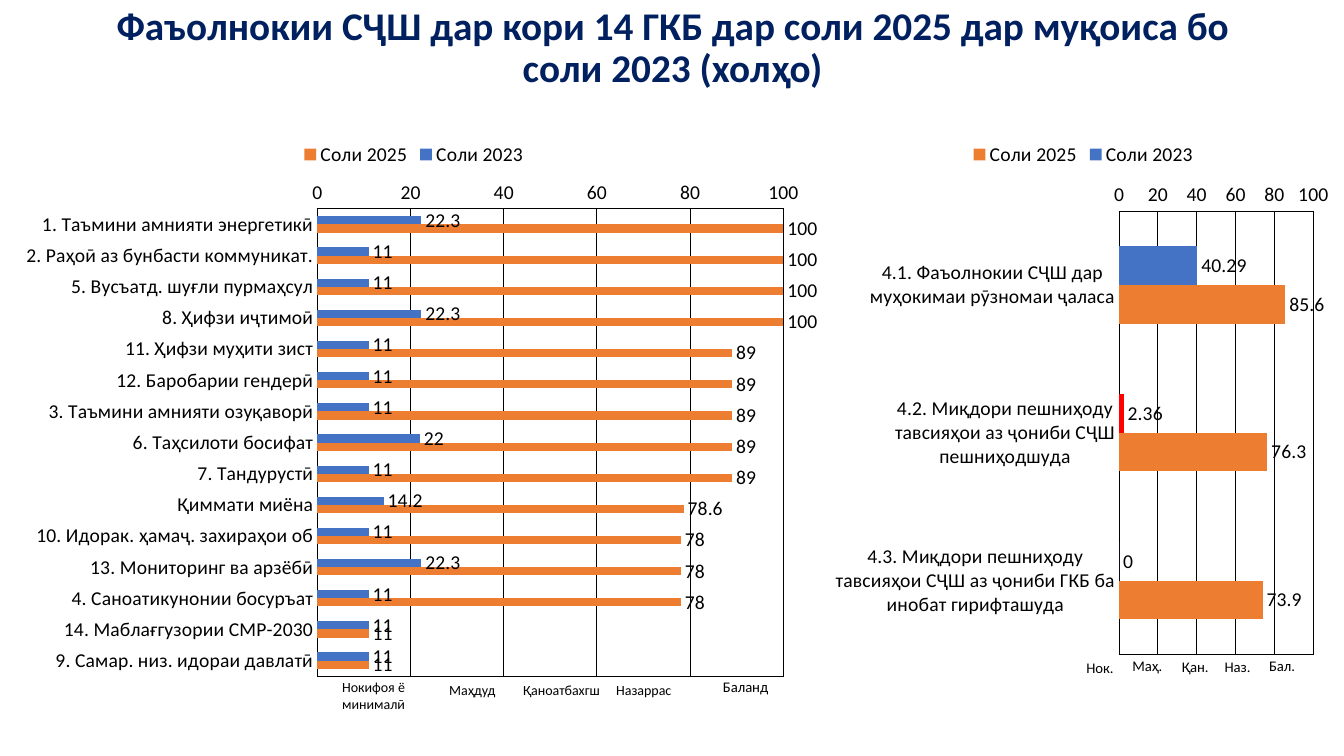
from lxml import etree
from pptx import Presentation
from pptx.chart.data import CategoryChartData
from pptx.dml.color import RGBColor
from pptx.enum.chart import XL_CHART_TYPE, XL_LABEL_POSITION, XL_LEGEND_POSITION, XL_TICK_MARK
from pptx.enum.shapes import MSO_SHAPE
from pptx.enum.text import MSO_ANCHOR, PP_ALIGN
from pptx.oxml import parse_xml
from pptx.util import Inches, Pt

RECT = MSO_SHAPE.RECTANGLE
MIDDLE = MSO_ANCHOR.MIDDLE
CENTER, LEFT = PP_ALIGN.CENTER, PP_ALIGN.LEFT
BAR = XL_CHART_TYPE.BAR_CLUSTERED
OUTSIDE = XL_LABEL_POSITION.OUTSIDE_END
TOP = XL_LEGEND_POSITION.TOP
NO_TICK = XL_TICK_MARK.NONE

COLORS = {
    "title": "002060", "text": "000000", "back": "FFFFFF",
    "2023": "4472C4", "2025": "ED7D31", "low": "FF0000",
}
FONT = "Calibri"
C_NS = "http://schemas.openxmlformats.org/drawingml/2006/chart"
A_NS = "http://schemas.openxmlformats.org/drawingml/2006/main"


def rgb(name):
    return RGBColor.from_string(COLORS[name])


def set_font(font, size, color="text", bold=False):
    font.name = FONT
    font.size = Pt(size)
    font.bold = bold
    font.color.rgb = rgb(color)


prs = Presentation()
prs.slide_width = Inches(13.33)
prs.slide_height = Inches(7.5)
s = prs.slides.add_slide(prs.slide_layouts[5])

title = s.shapes.title
title.left, title.top = Inches(0.92), Inches(0.38)
title.width, title.height = Inches(11.5), Inches(0.67)
tf = title.text_frame
tf.text = "Фаъолнокии СҶШ дар кори 14 ГКБ дар соли 2025 дар муқоиса бо соли 2023 (холҳо)\v"
tf.word_wrap = True
tf.vertical_anchor = MIDDLE
p = tf.paragraphs[0]
p.alignment = CENTER
p.line_spacing = 0.9
set_font(p.font, 28, "title", True)

scale_labels = [
    ("Нокифоя ё минималӣ", 3.12, 6.71, 1.17, 0.38, 10, CENTER, 0.1),
    ("Маҳдуд", 4.26, 6.68, 0.85, 0.32, 10, CENTER, 0.1),
    ("Қаноатбахгш", 5.09, 6.6, 1.17, 0.49, 10, LEFT, 0.1),
    ("Назаррас", 5.98, 6.68, 0.81, 0.32, 10, CENTER, 0.05),
    ("Баланд", 6.99, 6.65, 0.81, 0.32, 10.5, CENTER, 0.1),
    ("Нок.", 10.66, 6.46, 0.5, 0.32, 10.5, CENTER, 0.05),
    ("Маҳ.", 11.13, 6.44, 0.5, 0.32, 10.5, CENTER, 0.05),
    ("Қан.", 11.58, 6.45, 0.55, 0.32, 10.5, CENTER, 0.05),
    ("Наз.", 12, 6.45, 0.55, 0.32, 10.5, CENTER, 0.05),
    ("Бал.", 12.44, 6.44, 0.55, 0.32, 10.5, CENTER, 0.05),
]
for text, x, y, w, h, size, align, margin in scale_labels:
    sp = s.shapes.add_shape(RECT, Inches(x), Inches(y), Inches(w), Inches(h))
    sp.shadow.inherit = False
    sp.fill.solid()
    sp.fill.fore_color.rgb = rgb("back")
    sp.line.fill.background()
    tf = sp.text_frame
    tf.text = text
    tf.word_wrap = True
    tf.vertical_anchor = MIDDLE
    tf.margin_left = tf.margin_right = Inches(margin)
    p = tf.paragraphs[0]
    p.alignment = align
    set_font(p.font, size)

goals = [
    ("1. Таъмини амнияти энергетикӣ", 22.3, 100),
    ("2. Раҳоӣ аз бунбасти коммуникат.", 11, 100),
    ("5. Вусъатд. шуғли пурмаҳсул", 11, 100),
    ("8. Ҳифзи иҷтимоӣ", 22.3, 100),
    ("11. Ҳифзи муҳити зист", 11, 89),
    ("12. Баробарии гендерӣ", 11, 89),
    ("3. Таъмини амнияти озуқаворӣ", 11, 89),
    ("6. Таҳсилоти босифат", 22, 89),
    ("7. Тандурустӣ", 11, 89),
    ("Қиммати миёна", 14.2, 78.6),
    ("10. Идорак. ҳамаҷ. захираҳои об", 11, 78),
    ("13. Мониторинг ва арзёбӣ", 22.3, 78),
    ("4. Саноатикунонии босуръат", 11, 78),
    ("14. Маблағгузории СМР-2030", 11, 11),
    ("9. Самар. низ. идораи давлатӣ", 11, 11),
]
activity = [
    ("4.1. Фаъолнокии СҶШ дар муҳокимаи рӯзномаи ҷаласа", 40.29, 85.6),
    ("4.2. Миқдори пешниҳоду тавсияҳои аз ҷониби СҶШ пешниҳодшуда", 2.36, 76.3),
    ("4.3. Миқдори пешниҳоду тавсияҳои СҶШ аз ҷониби ГКБ ба инобат гирифташуда", 0, 73.9),
]
charts = [
    (goals, (0.12, 1.3, 7.99, 5.52), (0.38, 0.14, 0.58, 0.84), None),
    (activity, (8.21, 1.3, 5.07, 5.3), (0.57, 0.15, 0.38, 0.83), 1),
]
for rows, box, plot_box, low_point in charts:
    names, before, after = zip(*rows)
    data = CategoryChartData()
    data.categories = names
    data.add_series("Соли 2023", before)
    data.add_series("Соли 2025", after)
    chart = s.shapes.add_chart(BAR, *[Inches(v) for v in box], data).chart
    set_font(chart.font, 14)
    chart.has_title = False
    chart.has_legend = True
    chart.legend.position = TOP
    chart.legend.include_in_layout = False
    set_font(chart.legend.font, 14)

    cat_axis, val_axis = chart.category_axis, chart.value_axis
    cat_axis.reverse_order = True
    val_axis.minimum_scale, val_axis.maximum_scale = 0, 100
    val_axis.major_unit = 20
    for axis in (cat_axis, val_axis):
        axis.major_tick_mark = axis.minor_tick_mark = NO_TICK
        set_font(axis.tick_labels.font, 14)
    val_axis.format.line.fill.background()
    val_axis.has_major_gridlines = True
    for line in (cat_axis.format.line, val_axis.major_gridlines.format.line):
        line.color.rgb = rgb("text")
        line.width = Pt(0)

    plot = chart.plots[0]
    plot.gap_width = 182
    plot.overlap = 0
    plot.vary_by_categories = False
    for series, year in zip(plot.series, ("2023", "2025")):
        series.invert_if_negative = False
        series.format.fill.solid()
        series.format.fill.fore_color.rgb = rgb(year)
        labels = series.data_labels
        labels.show_value = True
        labels.position = OUTSIDE
        set_font(labels.font, 14)
    if low_point is not None:
        fill = plot.series[0].points[low_point].format.fill
        fill.solid()
        fill.fore_color.rgb = rgb("low")

    area = chart.element.chart.plotArea
    for old in area.findall(f"{{{C_NS}}}layout"):
        area.remove(old)
    layout = etree.Element(f"{{{C_NS}}}layout")
    manual = etree.SubElement(layout, f"{{{C_NS}}}manualLayout")
    settings = [("layoutTarget", "inner"), ("xMode", "edge"), ("yMode", "edge")]
    settings += zip("xywh", plot_box)
    for tag, value in settings:
        etree.SubElement(manual, f"{{{C_NS}}}{tag}").set("val", str(value))
    area.insert(0, layout)
    area.append(parse_xml(
        f'<c:spPr xmlns:c="{C_NS}" xmlns:a="{A_NS}"><a:noFill/><a:ln w="0"><a:solidFill>'
        f'<a:srgbClr val="{COLORS["text"]}"/></a:solidFill></a:ln></c:spPr>'))
    chart.element.chart.addnext(parse_xml(
        f'<c:spPr xmlns:c="{C_NS}" xmlns:a="{A_NS}"><a:noFill/>'
        '<a:ln><a:noFill/></a:ln></c:spPr>'))

prs.save("out.pptx")
